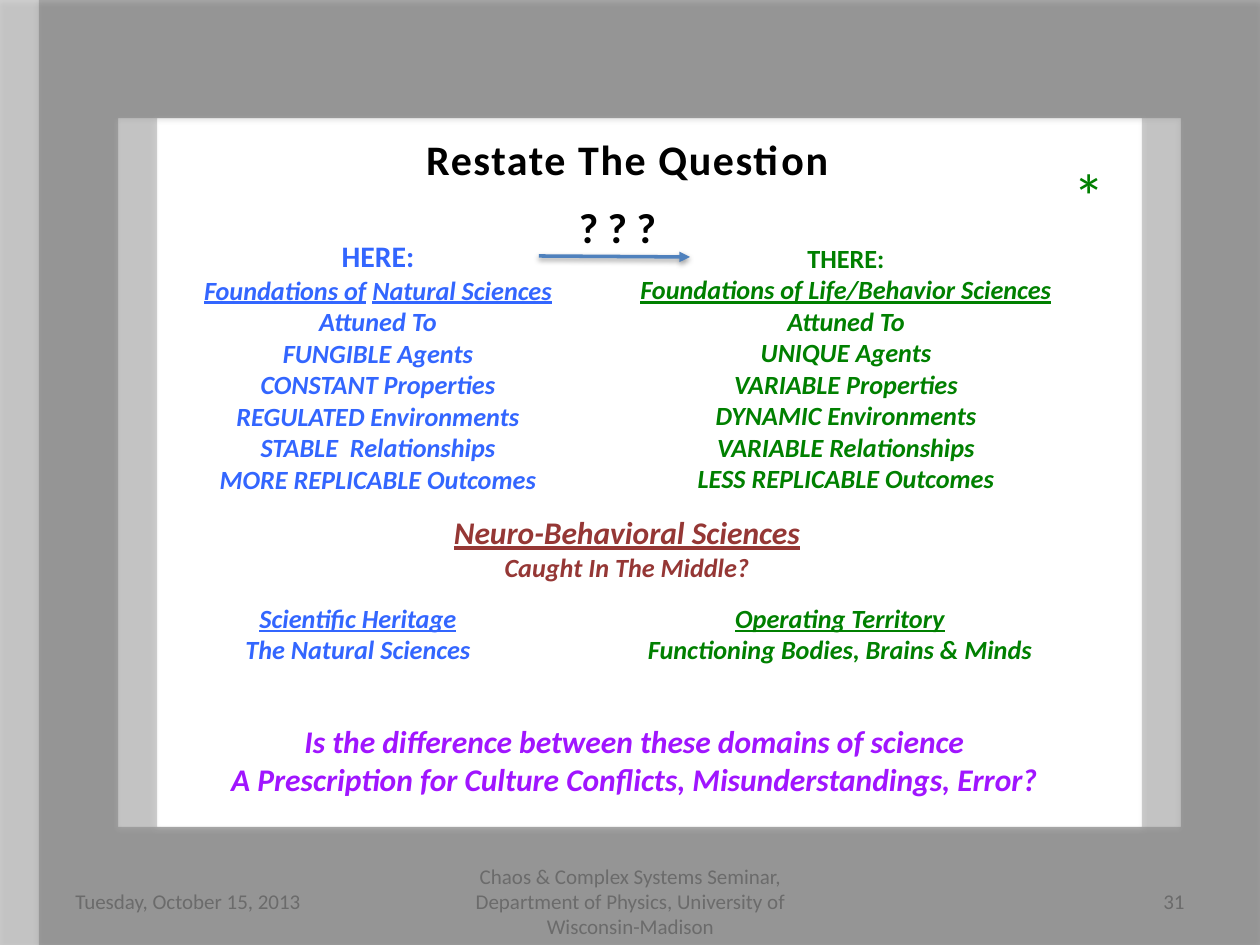
from pptx import Presentation
from pptx.dml.color import RGBColor
from pptx.enum.shapes import MSO_CONNECTOR, MSO_SHAPE
from pptx.enum.text import MSO_ANCHOR, PP_ALIGN
from pptx.oxml import parse_xml
from pptx.oxml.ns import nsdecls
from pptx.util import Pt

PX_PER_INCH = 126
EMU_PER_INCH = 914400

BLACK = RGBColor(0x00, 0x00, 0x00)
GREY = RGBColor(0x8C, 0x8C, 0x8C)
BLUE = RGBColor(0x33, 0x66, 0xFF)
GREEN = RGBColor(0x00, 0x80, 0x00)
BROWN = RGBColor(0x95, 0x37, 0x35)
PURPLE = RGBColor(0xA0, 0x15, 0xFF)
STEEL = RGBColor(0x4F, 0x81, 0xBD)

ITALIC = dict(bold=True, italic=True)
UNDERLINED = dict(ITALIC, underline=True)


def px(length):
    return round(length * EMU_PER_INCH / PX_PER_INCH)


class SlideBuilder:
    font = "Calibri"

    def __init__(self, slide):
        self.slide = slide

    def add_shadow(self, shape, alpha, distance):
        shape._element.spPr.append(parse_xml(
            f'<a:effectLst {nsdecls("a")}><a:outerShdw blurRad="{Pt(3.1)}" '
            f'dist="{Pt(distance)}" dir="5400000" rotWithShape="0">'
            f'<a:srgbClr val="000000"><a:alpha val="{alpha * 1000}"/></a:srgbClr>'
            '</a:outerShdw></a:effectLst>'))

    def frame(self, left, top, width, height, alpha=18):
        shape = self.slide.shapes.add_shape(
            MSO_SHAPE.FRAME, px(left), px(top), px(width), px(height))
        shape.fill.solid()
        shape.fill.fore_color.rgb = BLACK
        color = shape._element.spPr.find(".//" + "{*}srgbClr")
        color.append(parse_xml(f'<a:alpha {nsdecls("a")} val="{alpha * 1000}"/>'))
        shape.line.fill.background()
        self.add_shadow(shape, 35, 1.8)

    def text(self, box, paragraphs, color, size, align=PP_ALIGN.CENTER,
             anchor=MSO_ANCHOR.TOP, wrap=True, spacing=None):
        """Each paragraph is a list of (text, format values) runs."""
        shape = self.slide.shapes.add_textbox(*map(px, box))
        frame = shape.text_frame
        frame.word_wrap = wrap
        frame.vertical_anchor = anchor
        for index, runs in enumerate(paragraphs):
            paragraph = frame.paragraphs[0] if index == 0 else frame.add_paragraph()
            paragraph.alignment = align
            for content, values in runs:
                run = paragraph.add_run()
                run.text = content
                run.font.color.rgb = color
                formats = {"name": self.font, "size": Pt(size), **values}
                for name, value in formats.items():
                    setattr(run.font, name, value)
                if spacing:
                    run.font._element.set("spc", str(spacing))

    def arrow(self, start, end, color, width):
        line = self.slide.shapes.add_connector(
            MSO_CONNECTOR.STRAIGHT, *map(px, start + end))
        line.line.color.rgb = color
        line.line.width = Pt(width)
        line.line._get_or_add_ln().append(
            parse_xml(f'<a:tailEnd {nsdecls("a")} type="triangle"/>'))
        self.add_shadow(line, 38, 1.6)


def italic_lines(*lines):
    return [[(line, ITALIC)] for line in lines]


def main():
    presentation = Presentation()
    presentation.slide_width = px(1260)
    presentation.slide_height = px(945)
    builder = SlideBuilder(presentation.slides.add_slide(presentation.slide_layouts[6]))

    # Frames with the footer between them
    builder.frame(0, 0, 1260, 945)
    footers = [
        (63, 294, "Tuesday, October 15, 2013", PP_ALIGN.LEFT),
        (903, 294, "31", PP_ALIGN.RIGHT),
        (431, 399, "Chaos & Complex Systems Seminar, Department of Physics, "
                   "University of Wisconsin-Madison", PP_ALIGN.CENTER),
    ]
    for left, width, content, align in footers:
        builder.text((left, 876, width, 50), [[(content, {})]], GREY, 12,
                     align, MSO_ANCHOR.MIDDLE)
    builder.frame(39, 0, 1260, 945)

    # Title
    builder.text((131, 127, 993, 63), [[("Restate The Question", {"bold": True})]],
                 BLACK, 24, spacing=90)

    # The two domains
    here = [
        [("HERE:", {"bold": True, "size": Pt(17)})],
        [("Foundations of", UNDERLINED), (" ", ITALIC), ("Natural Sciences", UNDERLINED)],
    ] + italic_lines("Attuned To", "FUNGIBLE Agents", "CONSTANT Properties",
                     "REGULATED Environments", "STABLE  Relationships",
                     "MORE REPLICABLE Outcomes")
    there = [
        [("THERE:", {"bold": True})],
        [("Foundations of Life/Behavior Sciences", UNDERLINED)],
    ] + italic_lines("Attuned To", "UNIQUE Agents", "VARIABLE Properties",
                     "DYNAMIC Environments", "VARIABLE Relationships",
                     "LESS REPLICABLE Outcomes")
    builder.text((141, 232, 474, 275), here, BLUE, 15)
    builder.text((615, 236, 462, 268), there, GREEN, 15)

    # Caught between heritage and territory
    middle = [[("Neuro-Behavioral Sciences", {**UNDERLINED, "size": Pt(18)})]]
    builder.text((113, 507, 1028, 84), middle + italic_lines("Caught In The Middle?"),
                 BROWN, 15)
    outcomes = [
        (148, "Scientific Heritage", "The Natural Sciences", BLUE),
        (630, "Operating Territory", "Functioning Bodies, Brains & Minds", GREEN),
    ]
    for left, heading, content, color in outcomes:
        builder.text((left, 596, 420, 76),
                     [[(heading, UNDERLINED)]] + italic_lines(content), color, 15)

    # Closing question
    builder.text((141, 716, 987, 88), italic_lines(
        "Is the difference between these domains of science",
        "A Prescription for Culture Conflicts, Misunderstandings, Error?"), PURPLE, 18)

    # Arrow and marks
    builder.arrow((539, 256), (690, 257), STEEL, 2)
    builder.text((566, 195, 103, 63), [[("? ? ?", {"bold": True})]], BLACK, 24, wrap=False)
    builder.text((1061, 150, 57, 89), [[("*", {})]], GREEN, 36, PP_ALIGN.LEFT, wrap=False)

    presentation.save("out.pptx")


if __name__ == "__main__":
    main()
